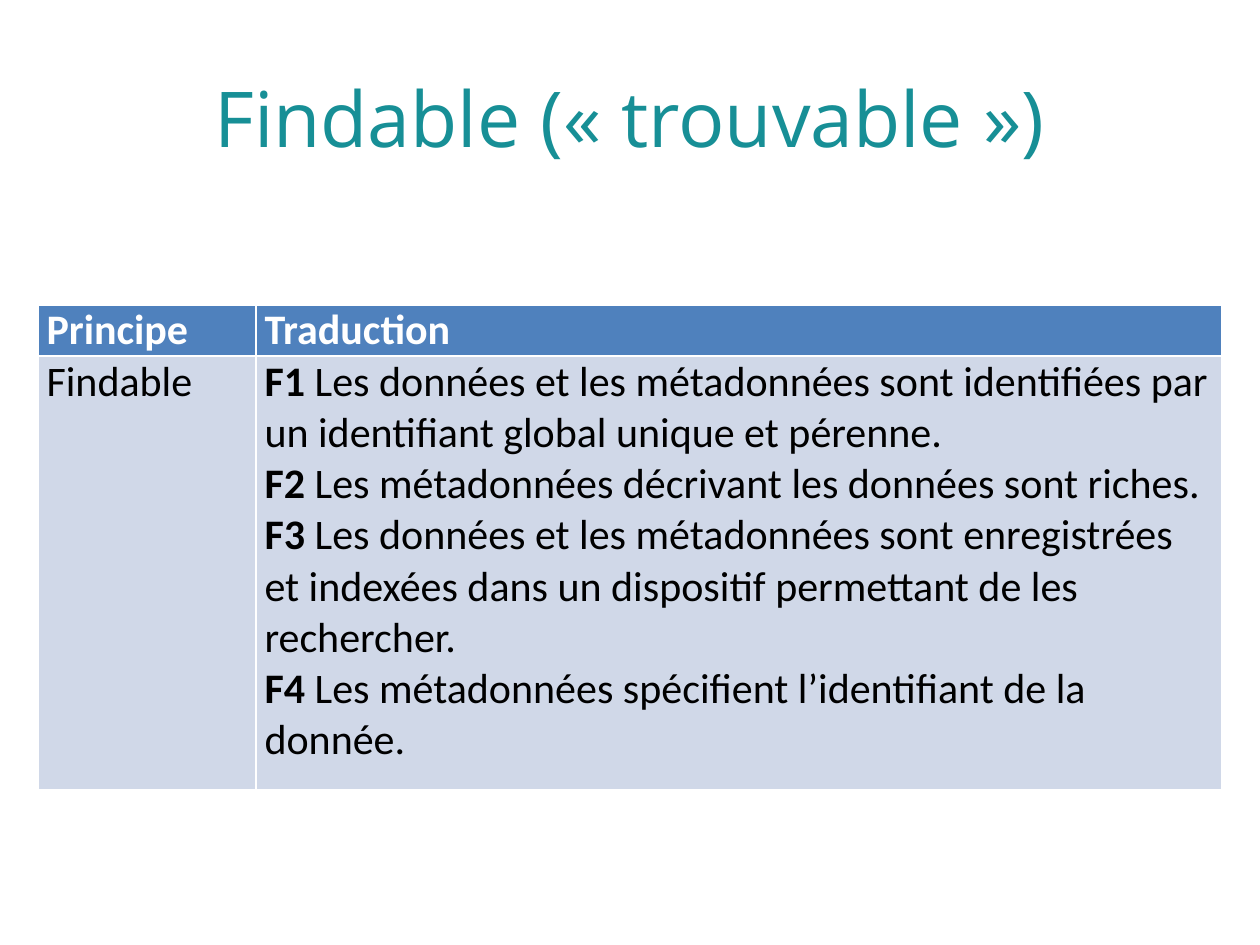
from dataclasses import dataclass

from pptx import Presentation
from pptx.dml.color import RGBColor
from pptx.enum.text import MSO_ANCHOR, PP_ALIGN
from pptx.util import Inches, Pt

TEAL = RGBColor(0x17, 0x8F, 0x96)
BLUE = RGBColor(0x4F, 0x81, 0xBD)
PALE = RGBColor(0xD0, 0xD8, 0xE8)
WHITE = RGBColor(0xFF, 0xFF, 0xFF)
BLACK = RGBColor(0x00, 0x00, 0x00)

W, H = Inches(10), Inches(7.5)
COLS = (0.173, 0.767)  # shares of the slide width
ROWS = (Inches(0.4), Inches(3.44))


@dataclass
class Line:
    bold: str = ""
    plain: str = ""


@dataclass
class RowStyle:
    fill: RGBColor
    color: RGBColor


HEADER = RowStyle(BLUE, WHITE)
BODY = RowStyle(PALE, BLACK)

TABLE = [
    (HEADER, [[Line("Principe")], [Line("Traduction")]]),
    (BODY, [
        [Line(plain="Findable")],
        [
            Line("F1", " Les données et les métadonnées sont identifiées par "
                 "un identifiant global unique et pérenne."),
            Line("F2", " Les métadonnées décrivant les données sont riches."),
            Line("F3", " Les données et les métadonnées sont enregistrées et "
                 "indexées dans un dispositif permettant de les rechercher."),
            Line("F4", " Les métadonnées spécifient l’identifiant de la donnée."),
        ],
    ]),
]


def add_run(p, text: str, color: RGBColor, **fmt) -> None:
    r = p.add_run()
    r.text = text
    r.font.color.rgb = color
    for name, value in fmt.items():
        setattr(r.font, name, value)


def fill_cell(cell, lines: list[Line], style: RowStyle) -> None:
    margins = {"margin_left": Inches(0.07), "margin_right": Inches(0.07),
               "margin_top": 0, "margin_bottom": 0}
    for name, value in margins.items():
        setattr(cell, name, value)
    cell.fill.solid()
    cell.fill.fore_color.rgb = style.fill
    tf = cell.text_frame
    for i, line in enumerate(lines):
        p = tf.add_paragraph() if i else tf.paragraphs[0]
        for text, bold in ((line.bold, True), (line.plain, False)):
            if text:
                add_run(p, text, style.color, name="Calibri", size=Pt(24), bold=bold)


def main() -> None:
    prs = Presentation()
    prs.slide_width, prs.slide_height = W, H
    s = prs.slides.add_slide(prs.slide_layouts[5])

    # Title
    title = s.shapes.title
    box = {"left": int(W * 0.05), "top": int(H * 0.04),
           "width": int(W * 0.9), "height": Inches(1.25)}
    for name, value in box.items():
        setattr(title, name, value)
    tf = title.text_frame
    tf.vertical_anchor = MSO_ANCHOR.MIDDLE
    p = tf.paragraphs[0]
    p.alignment = PP_ALIGN.CENTER
    add_run(p, "Findable (« trouvable »)", TEAL, name="Open Sans", size=Pt(44))

    # Principle table; its white rules come from the default table style
    table = s.shapes.add_table(
        len(ROWS), len(COLS), int(W * 0.03), Inches(2.42),
        int(W * sum(COLS)), sum(ROWS)).table
    for col, share in zip(table.columns, COLS):
        col.width = int(W * share)
    for row, height, (style, cells) in zip(table.rows, ROWS, TABLE):
        row.height = height
        for cell, lines in zip(row.cells, cells):
            fill_cell(cell, lines, style)

    prs.save("out.pptx")


if __name__ == "__main__":
    main()
